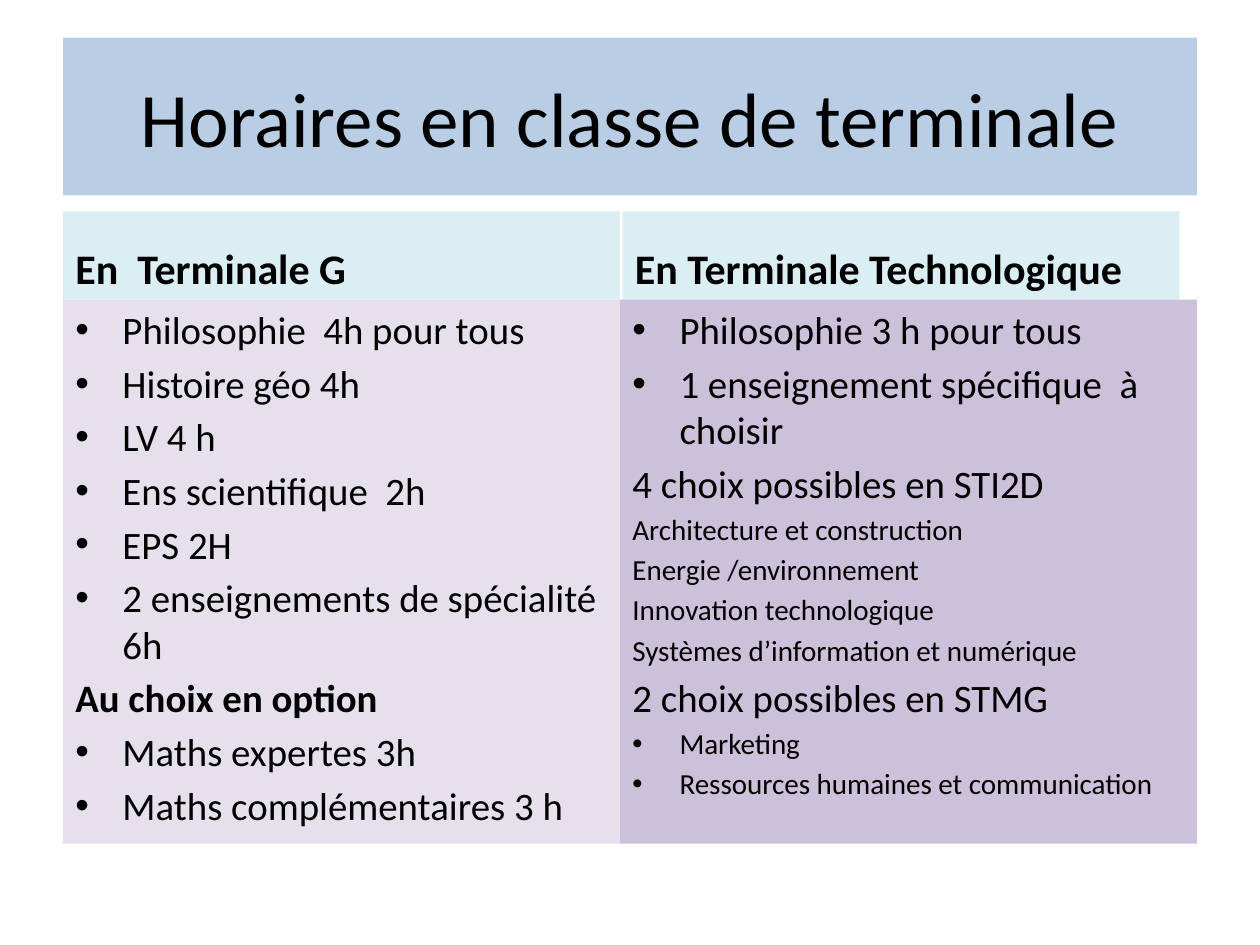
from lxml import etree
from pptx import Presentation
from pptx.dml.color import RGBColor
from pptx.enum.shapes import MSO_SHAPE
from pptx.enum.text import MSO_ANCHOR, PP_ALIGN
from pptx.oxml.ns import qn
from pptx.util import Cm, Pt

FONT = "Calibri"
BLACK = RGBColor(0x00, 0x00, 0x00)
BLUE = RGBColor(0xB9, 0xCD, 0xE5)
AQUA = RGBColor(0xDB, 0xEE, 0xF4)
LILAC = RGBColor(0xE6, 0xE0, 0xEC)
PURPLE = RGBColor(0xCC, 0xC1, 0xDA)

LARGE, SMALL = 22.2, 16.6
LEFT = 1.27
HEAD_TOP, HEAD_H = 4.26, 1.78
LIST_TOP, LIST_H = HEAD_TOP + HEAD_H, 10.97
COL_W = 11.23

GENERAL = [
    ("Philosophie  4h pour tous", LARGE, True, False),
    ("Histoire géo 4h", LARGE, True, False),
    ("LV 4 h", LARGE, True, False),
    ("Ens scientifique  2h", LARGE, True, False),
    ("EPS 2H", LARGE, True, False),
    ("2 enseignements de spécialité 6h", LARGE, True, False),
    ("Au choix en option", LARGE, False, True),
    ("Maths expertes 3h", LARGE, True, False),
    ("Maths complémentaires 3 h", LARGE, True, False),
]
TECHNO = [
    ("Philosophie 3 h pour tous", LARGE, True, False),
    ("1 enseignement spécifique  à choisir", LARGE, True, False),
    ("4 choix possibles en STI2D", LARGE, False, False),
    ("Architecture et construction", SMALL, False, False),
    ("Energie /environnement", SMALL, False, False),
    ("Innovation technologique", SMALL, False, False),
    ("Systèmes d’information et numérique", SMALL, False, False),
    ("2 choix possibles en STMG", LARGE, False, False),
    ("Marketing", SMALL, True, False),
    ("Ressources humaines et communication", SMALL, True, False),
]


def fill(sp, color):
    sp.fill.solid()
    sp.fill.fore_color.rgb = color


def style(p, text, size, bold=False, align=PP_ALIGN.LEFT):
    p.text = text
    p.alignment = align
    p.font.name = FONT
    p.font.size = Pt(size)
    p.font.bold = bold
    p.font.color.rgb = BLACK


def add_bullet(p):
    pPr = p._p.get_or_add_pPr()
    pPr.set("marL", str(Cm(0.95)))
    pPr.set("indent", str(-Cm(0.95)))
    font = etree.Element(qn("a:buFont"), typeface="Arial")
    char = etree.Element(qn("a:buChar"), char="•")
    pPr.insert_element_before(font, "a:buChar", "a:tabLst", "a:defRPr", "a:extLst")
    pPr.insert_element_before(char, "a:tabLst", "a:defRPr", "a:extLst")


def add_panel(s, left, top, width, height, color, anchor):
    sp = s.shapes.add_shape(MSO_SHAPE.RECTANGLE, Cm(left), Cm(top), Cm(width), Cm(height))
    sp.shadow.inherit = False
    sp.line.fill.background()
    fill(sp, color)
    tf = sp.text_frame
    tf.word_wrap = True
    tf.vertical_anchor = anchor
    return tf


def add_title(s, left, top, width, height):
    sp = s.shapes.title
    sp.left, sp.top, sp.width, sp.height = Cm(left), Cm(top), Cm(width), Cm(height)
    fill(sp, BLUE)
    sp.text_frame.vertical_anchor = MSO_ANCHOR.MIDDLE
    style(sp.text_frame.paragraphs[0], "Horaires en classe de terminale", 44, align=PP_ALIGN.CENTER)


def add_heading(s, left, top, width, height, text):
    tf = add_panel(s, left, top, width, height, AQUA, MSO_ANCHOR.BOTTOM)
    style(tf.paragraphs[0], text, 24, bold=True)


def add_list(s, left, top, width, height, color, items):
    tf = add_panel(s, left, top, width, height, color, MSO_ANCHOR.TOP)
    for i, (text, size, bullet, bold) in enumerate(items):
        p = tf.add_paragraph() if i else tf.paragraphs[0]
        style(p, text, size, bold)
        p.space_before = Pt(round(0.18 * size, 1))
        if bullet:
            add_bullet(p)


def main():
    prs = Presentation()
    prs.slide_width, prs.slide_height = Cm(25.4), Cm(19.05)
    s = prs.slides.add_slide(prs.slide_layouts[5])
    add_title(s, LEFT, 0.76, 22.86, 3.18)
    add_heading(s, LEFT, HEAD_TOP, COL_W, HEAD_H, "En  Terminale G")
    add_list(s, LEFT, LIST_TOP, COL_W, LIST_H, LILAC, GENERAL)
    add_heading(s, 12.55, HEAD_TOP, COL_W, HEAD_H, "En Terminale Technologique")
    add_list(s, LEFT + COL_W, LIST_TOP, 11.63, LIST_H, PURPLE, TECHNO)
    prs.save("out.pptx")


if __name__ == "__main__":
    main()
